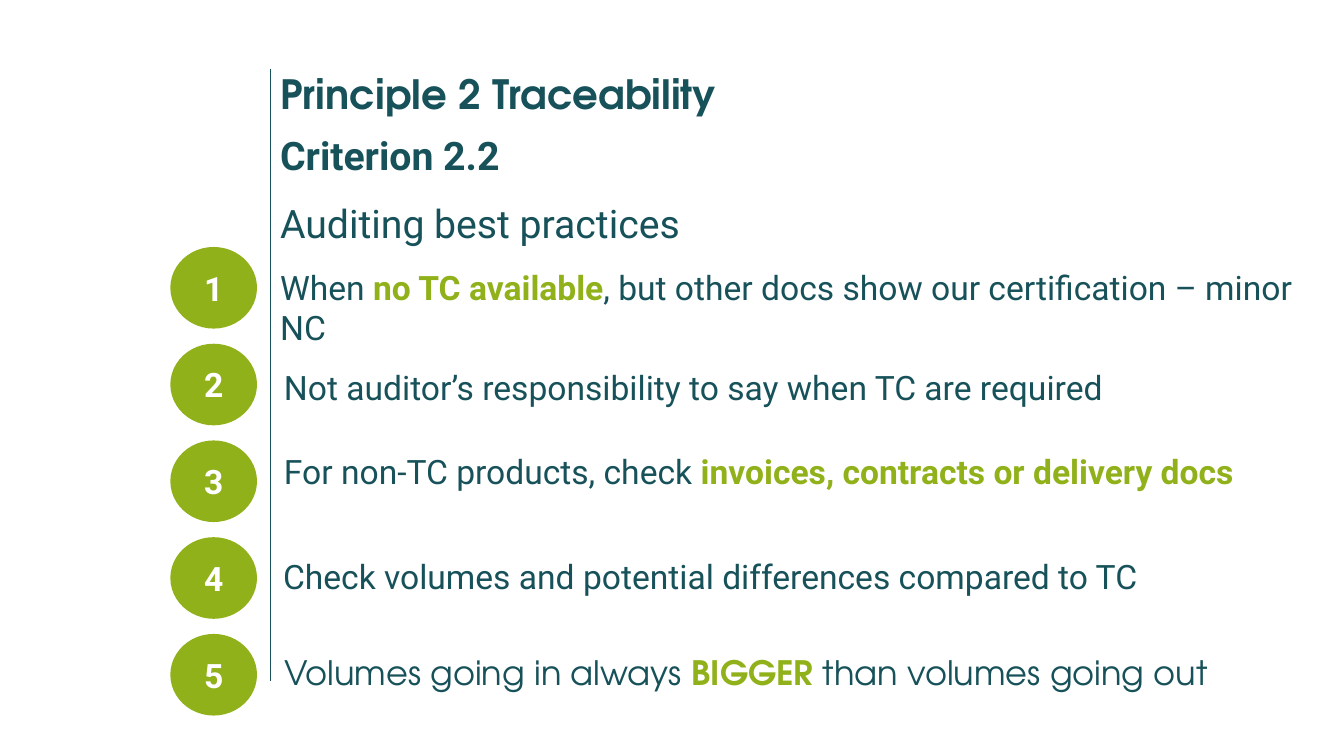
from dataclasses import dataclass

from lxml import etree
from pptx import Presentation
from pptx.dml.color import RGBColor
from pptx.enum import shapes, text
from pptx.oxml.ns import qn
from pptx.util import Pt


@dataclass(frozen=True)
class Theme:
    teal: RGBColor = RGBColor(0x17, 0x51, 0x59)
    green: RGBColor = RGBColor(0x91, 0xB1, 0x1B)
    white: RGBColor = RGBColor(0xFF, 0xFF, 0xFF)
    display: str = "TeX Gyre Adventor"
    sans: str = "Roboto"
    title_size: float = 28.8
    heading_size: float = 28
    item_size: float = 24


@dataclass(frozen=True)
class Run:
    text: str
    strong: bool = False


@dataclass(frozen=True)
class Box:
    left: float
    top: float
    width: float
    height: float


@dataclass(frozen=True)
class Practice:
    box: Box
    runs: tuple[Run, ...]


THEME = Theme()
RULE_X, RULE_TOP, RULE_BOTTOM = 193, 49, 486.7
BADGE = Box(121.7, 176.4, 61.9, 58.3)
BADGE_PITCH = 69.1
TITLE_BOX = Box(193, 46.1, 725, 29.5)
HEADING_BOX = Box(193, 94.3, 767, 374.4)

PRACTICES = (
    Practice(Box(193, 187.2, 749.5, 65.5), (
        Run("When "), Run("no TC available", True),
        Run(", but other docs show our certification – minor NC"))),
    Practice(Box(195.8, 258.5, 764, 36), (
        Run("Not auditor’s responsibility to say when TC are required"),)),
    Practice(Box(195.8, 318.2, 764, 65.5), (
        Run("For non-TC products, check "),
        Run("invoices, contracts or delivery docs", True))),
    Practice(Box(195.1, 393.8, 764, 36), (
        Run("Check volumes and potential differences compared to TC"),)),
    Practice(Box(195.8, 462.2, 764, 61.9), (
        Run("Volumes going in always "), Run("BIGGER ", True),
        Run("than volumes going out"))),
)


def lengths(box: Box) -> tuple:
    return Pt(box.left), Pt(box.top), Pt(box.width), Pt(box.height)


def place(sp, box: Box) -> None:
    sp.left, sp.top, sp.width, sp.height = lengths(box)


def prepare(tf) -> None:
    """Wrap the text, keep the frame's size and start at its top."""
    tf.word_wrap = True
    tf.auto_size = text.MSO_AUTO_SIZE.NONE
    tf.vertical_anchor = text.MSO_ANCHOR.TOP


def add_run(p, words: str, font: str, size: float, color: RGBColor,
            bold: bool) -> None:
    r = p.add_run()
    r.text = words
    r.font.name, r.font.size, r.font.bold = font, Pt(size), bold
    r.font.color.rgb = color


def remove_bullet(p) -> None:
    pPr = p._p.get_or_add_pPr()
    pPr.set("marL", "0")
    pPr.set("indent", "0")
    etree.SubElement(pPr, qn("a:buNone"))


def add_rule(slide) -> None:
    line = slide.shapes.add_connector(
        shapes.MSO_CONNECTOR.STRAIGHT,
        Pt(RULE_X), Pt(RULE_TOP), Pt(RULE_X), Pt(RULE_BOTTOM))
    line.line.color.rgb = THEME.teal
    line.line.width = Pt(0.5)
    etree.SubElement(line._element.spPr, qn("a:effectLst"))


def fill_title(title) -> None:
    place(title, TITLE_BOX)
    prepare(title.text_frame)
    p = title.text_frame.paragraphs[0]
    p.alignment = text.PP_ALIGN.LEFT
    add_run(p, "Principle 2 Traceability", THEME.display, THEME.title_size,
            THEME.teal, True)


def add_headings(slide) -> None:
    tf = slide.shapes.add_textbox(*lengths(HEADING_BOX)).text_frame
    prepare(tf)
    first, second = tf.paragraphs[0], tf.add_paragraph()
    second.space_before = Pt(18)
    for p, words, bold in ((first, "Criterion 2.2", True),
                           (second, "Auditing best practices", False)):
        p.line_spacing = 0.9
        add_run(p, words, THEME.sans, THEME.heading_size, THEME.teal, bold)


def add_badge(slide, number: int) -> None:
    sp = slide.shapes.add_shape(shapes.MSO_SHAPE.OVAL, *lengths(BADGE))
    sp.top = Pt(BADGE.top + (number - 1) * BADGE_PITCH)
    sp.shadow.inherit = False
    sp.fill.solid()
    sp.fill.fore_color.rgb = THEME.green
    sp.line.fill.background()
    tf = sp.text_frame
    tf.vertical_anchor = text.MSO_ANCHOR.MIDDLE
    p = tf.paragraphs[0]
    p.alignment = text.PP_ALIGN.CENTER
    add_run(p, str(number), THEME.sans, THEME.item_size, THEME.white, True)


def fill_practice(sp, practice: Practice, font: str) -> None:
    prepare(sp.text_frame)
    p = sp.text_frame.paragraphs[0]
    for run in practice.runs:
        color = THEME.green if run.strong else THEME.teal
        add_run(p, run.text, font, THEME.item_size, color, run.strong)


def main() -> None:
    prs = Presentation()
    prs.slide_width, prs.slide_height = Pt(960), Pt(540)
    slide = prs.slides.add_slide(prs.slide_layouts[1])
    add_rule(slide)
    fill_title(slide.shapes.title)
    add_headings(slide)

    *boxed, closing = PRACTICES
    for practice in boxed:
        sp = slide.shapes.add_textbox(*lengths(practice.box))
        fill_practice(sp, practice, THEME.sans)

    body = slide.placeholders[1]
    place(body, closing.box)
    p = body.text_frame.paragraphs[0]
    remove_bullet(p)
    p.space_before = Pt(0)
    p.space_after = Pt(12)
    fill_practice(body, closing, THEME.display)

    for number in range(1, len(PRACTICES) + 1):
        add_badge(slide, number)
    prs.save("out.pptx")


if __name__ == "__main__":
    main()
